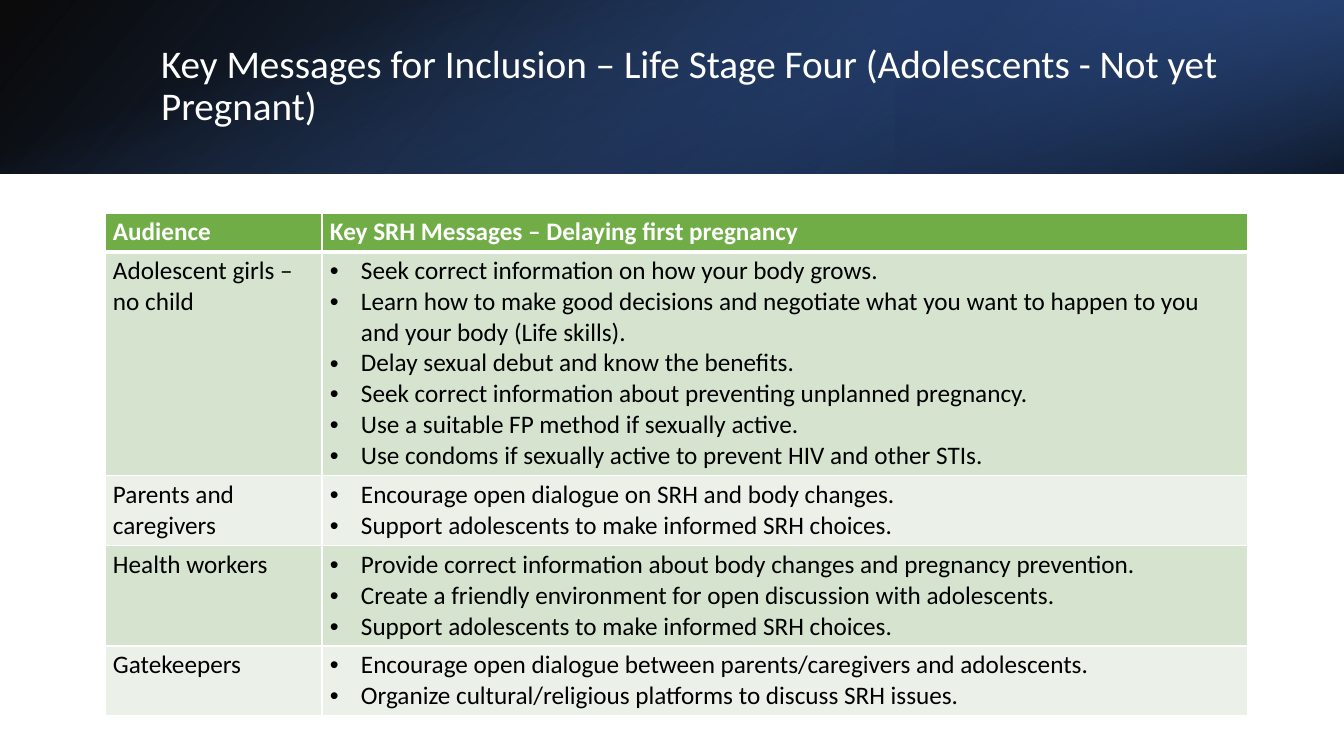
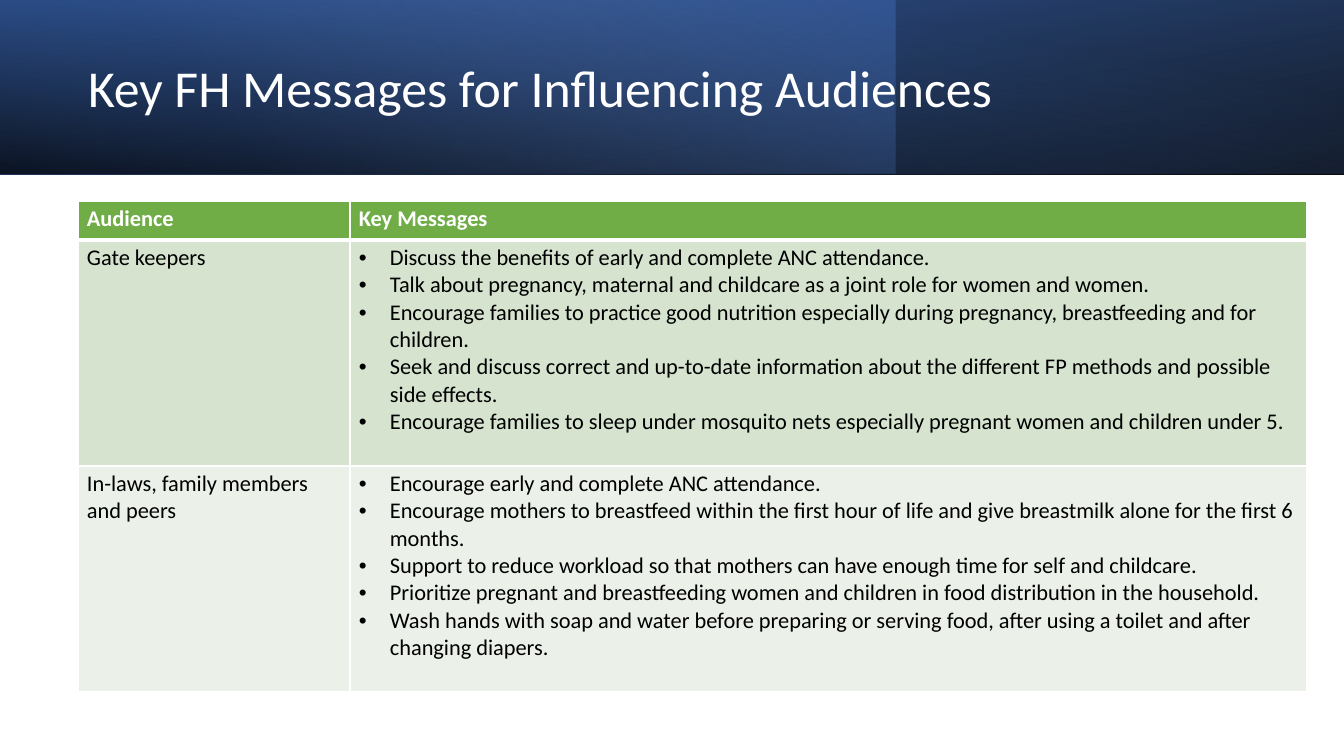
from lxml import etree
from pptx import Presentation
from pptx.dml.color import RGBColor
from pptx.enum.shapes import MSO_SHAPE
from pptx.enum.text import MSO_ANCHOR, MSO_AUTO_SIZE, PP_ALIGN
from pptx.oxml.ns import qn
from pptx.util import Emu, Pt

RECT = MSO_SHAPE.RECTANGLE
MIDDLE = MSO_ANCHOR.MIDDLE
NO_FIT = MSO_AUTO_SIZE.NONE
LEFT = PP_ALIGN.LEFT

SCALE = 914400 / 100.8
WIDE, HIGH, BAND = 1344, 756, 174
SIDE = 896  # width of the part band on slide 2
FONT = "Calibri"
HANG = 31
COLORS = {
    "white": "FFFFFF", "black": "000000", "green": "70AD47",
    "sage": "D5E3CF", "mist": "EBF1E9", "deep": "2F5597",
    "navy": "203864", "blue": "4472C4", "sky": "8FAADC",
}

# Layers of a band: box, rotation, flip, gradient angle,
# then stops of position, colour and opacity in percent.
FULL = (0, 0, WIDE, BAND)
MID = (WIDE - BAND) // 2
SKIES = [
    [
        (FULL, 0, True, 140, [(0, "black", 96), (100, "deep", 100)]),
        ((SIDE, 0, WIDE - SIDE, BAND), 180, True, 320,
         [(19, "navy", 68), (100, "blue", 79)]),
        ((MID, -MID, BAND, WIDE), 90, False, 340,
         [(23, "blue", 0), (99, "black", 74)]),
    ],
    [
        (FULL, 180, True, 100, [(0, "black", 96), (100, "deep", 100)]),
        ((0, 0, SIDE, BAND), 0, False, 140,
         [(0, "blue", 41), (74, "sky", 0)]),
        (FULL, 0, True, 260, [(0, "black", 63), (78, "blue", 15)]),
    ],
]

GIRLS = [
    ("Audience", ["Key SRH Messages – Delaying first pregnancy"]),
    ("Adolescent girls – no child", [
        "Seek correct information on how your body grows.",
        "Learn how to make good decisions and negotiate what you want to "
        "happen to you and your body (Life skills).",
        "Delay sexual debut and know the benefits.",
        "Seek correct information about preventing unplanned pregnancy.",
        "Use a suitable FP method if sexually active.",
        "Use condoms if sexually active to prevent HIV and other STIs.",
    ]),
    ("Parents and caregivers", [
        "Encourage open dialogue on SRH and body changes.",
        "Support adolescents to make informed SRH choices.",
    ]),
    ("Health workers", [
        "Provide correct information about body changes and pregnancy "
        "prevention.",
        "Create a friendly environment for open discussion with adolescents.",
        "Support adolescents to make informed SRH choices.",
    ]),
    ("Gatekeepers", [
        "Encourage open dialogue between parents/caregivers and adolescents.",
        "Organize cultural/religious platforms to discuss SRH issues.",
    ]),
]
PEERS = [
    ("Audience", ["Key Messages"]),
    ("Gate keepers", [
        "Discuss the benefits of early and complete ANC attendance.",
        "Talk about pregnancy, maternal and childcare as a joint role for "
        "women and women.",
        "Encourage families to practice good nutrition especially during "
        "pregnancy, breastfeeding and for children.",
        "Seek and discuss correct and up-to-date information about the "
        "different FP methods and possible side effects.",
        "Encourage families to sleep under mosquito nets especially pregnant "
        "women and children under 5.",
    ]),
    ("In-laws, family members and peers", [
        "Encourage early and complete ANC attendance.",
        "Encourage mothers to breastfeed within the first hour of life and "
        "give breastmilk alone for the first 6 months.",
        "Support to reduce workload so that mothers can have enough time for "
        "self and childcare.",
        "Prioritize pregnant and breastfeeding women and children in food "
        "distribution in the household.",
        "Wash hands with soap and water before preparing or serving food, "
        "after using a toilet and after changing diapers.",
    ]),
]


def px(num):
    return Emu(round(num * SCALE))


def rgb(name):
    return RGBColor.from_string(COLORS[name])


def style(para, size, color, bold=False):
    font = para.font
    font.name, font.size, font.bold = FONT, Pt(size), bold
    font.color.rgb = rgb(color)


def add_layer(slide, box, turn, flip, angle, stops):
    shape = slide.shapes.add_shape(RECT, *map(px, box))
    shape.rotation = turn
    shape.shadow.inherit = False
    shape.line.fill.background()
    props = shape.element.spPr
    if flip:
        props.find(qn("a:xfrm")).set("flipH", "1")
    fill = shape.fill
    fill.gradient()
    fill.gradient_angle = 360 - angle
    for stop, (pos, name, _) in zip(fill.gradient_stops, stops):
        stop.position = pos / 100
        stop.color.rgb = rgb(name)
    tints = props.iter(qn("a:srgbClr"))
    for tint, (_, _, alpha) in zip(tints, stops):
        etree.SubElement(tint, qn("a:alpha"), val=str(alpha * 1000))


def add_title(slide, box, text, size):
    title = slide.shapes.title
    title.left, title.top, title.width, title.height = map(px, box)
    frame = title.text_frame
    frame.text = text
    frame.word_wrap = True
    frame.auto_size = NO_FIT
    frame.vertical_anchor = MIDDLE
    para = frame.paragraphs[0]
    para.alignment = LEFT
    para.line_spacing = 0.9
    style(para, size, "white")
    slide.shapes._spTree.append(title.element)  # bring above the band


def add_bullet(para):
    props = para._p.get_or_add_pPr()
    props.set("marL", str(px(HANG)))
    props.set("indent", str(-px(HANG)))
    etree.SubElement(props, qn("a:buFont"), typeface="Arial")
    etree.SubElement(props, qn("a:buChar"), char="•")


def add_edges(cell, row):
    """White cell borders, thick between the header and the body."""
    sides = {"L": 1, "R": 1, "T": 3 if row == 1 else 1,
             "B": 3 if row == 0 else 1}
    props = cell._tc.get_or_add_tcPr()
    for spot, (side, width) in enumerate(sides.items()):
        line = etree.Element(qn(f"a:ln{side}"), w=str(Pt(width)))
        fill = etree.SubElement(line, qn("a:solidFill"))
        etree.SubElement(fill, qn("a:srgbClr"), val=COLORS["white"])
        props.insert(spot, line)


def fill_cell(cell, row, lines, size, pad, dots):
    head = row == 0
    cell.margin_left = cell.margin_right = px(pad)
    cell.margin_top = cell.margin_bottom = px(4)
    cell.fill.solid()
    cell.fill.fore_color.rgb = rgb(
        "green" if head else "sage" if row % 2 else "mist")
    add_edges(cell, row)
    cell.text = "\n".join(lines)
    for para in cell.text_frame.paragraphs:
        if dots:
            add_bullet(para)
        style(para, size, "white" if head else "black", head)


def add_grid(slide, spot, cols, rows, data, size, pad):
    box = (*spot, sum(cols), sum(rows))
    frame = slide.shapes.add_table(len(rows), len(cols), *map(px, box))
    table = frame.table
    for col, width in zip(table.columns, cols):
        col.width = px(width)
    for row, (high, (who, lines)) in enumerate(zip(rows, data)):
        table.rows[row].height = px(high)
        fill_cell(table.cell(row, 0), row, [who], size, pad, False)
        fill_cell(table.cell(row, 1), row, lines, size, pad, row > 0)


def add_page(deck, sky, title, grid):
    slide = deck.slides.add_slide(deck.slide_layouts[5])
    for layer in sky:
        add_layer(slide, *layer)
    add_title(slide, *title)
    add_grid(slide, *grid)


def main():
    deck = Presentation()
    deck.slide_width, deck.slide_height = px(WIDE), px(HIGH)
    add_page(
        deck, SKIES[0],
        ((151, 38, 1107, 97), "Key Messages for Inclusion – Life Stage Four "
         "(Adolescents - Not yet Pregnant)", 28),
        ((105, 213), (217, 926), (38, 224, 70, 100, 70), GIRLS, 18, 8))
    add_page(
        deck, SKIES[1],
        ((78, 27, 1122, 128), "Key FH Messages for Influencing Audiences", 37),
        ((78, 201), (272, 957), (39, 226, 226), PEERS, 16, 9))
    deck.save("out.pptx")


if __name__ == "__main__":
    main()
